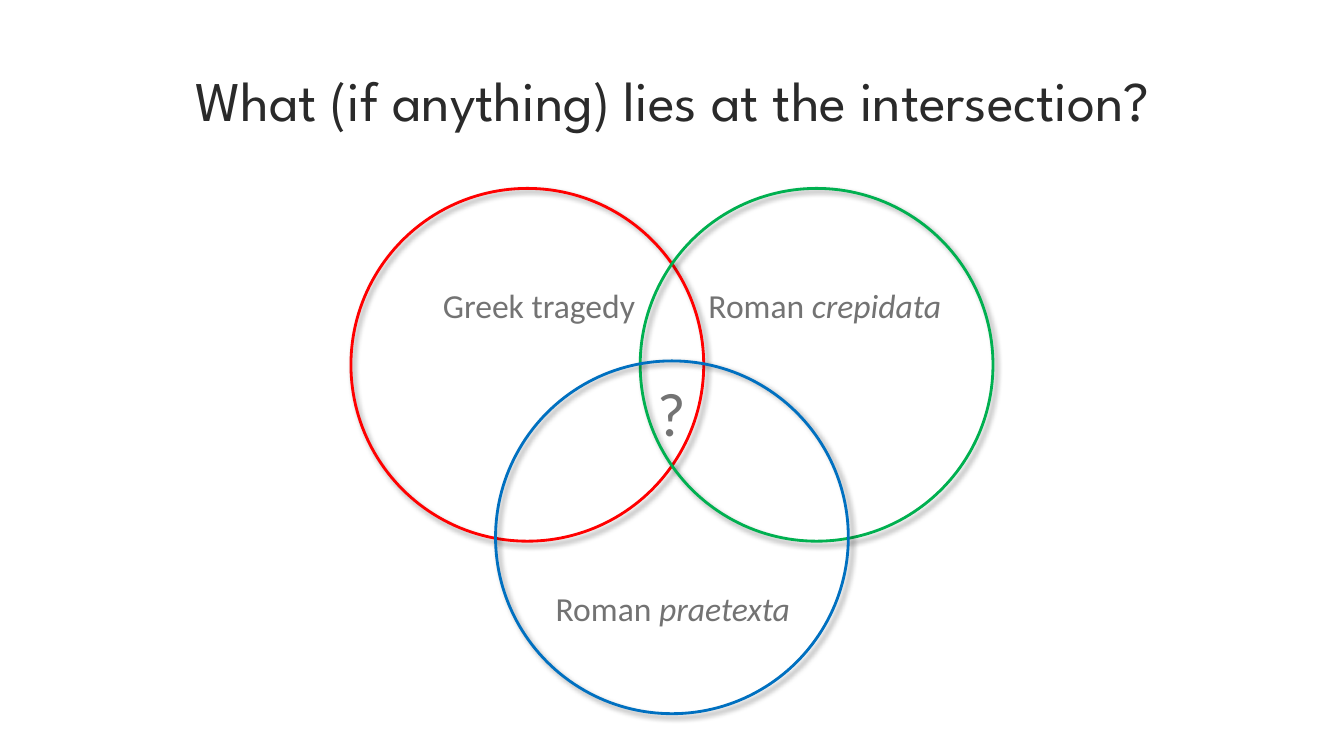
from lxml import etree
from pptx import Presentation
from pptx.dml.color import RGBColor
from pptx.enum.shapes import MSO_SHAPE
from pptx.enum.text import MSO_ANCHOR, MSO_AUTO_SIZE, PP_ALIGN
from pptx.oxml.ns import qn
from pptx.util import Pt

ELLIPSE = MSO_SHAPE.OVAL
TOP, MIDDLE = MSO_ANCHOR.TOP, MSO_ANCHOR.MIDDLE
GROW = MSO_AUTO_SIZE.SHAPE_TO_FIT_TEXT
LEFT, CENTER, RIGHT = PP_ALIGN.LEFT, PP_ALIGN.CENTER, PP_ALIGN.RIGHT


def rgb(hex_color):
    return RGBColor.from_string(hex_color)


class VennSlide:
    heading_font = "League Spartan"
    label_font = "Calibri"
    heading_color = "2A2A2A"
    label_color = "737373"
    diameter = 252

    def __init__(self, deck):
        self.slide = deck.slides.add_slide(deck.slide_layouts[5])

    def set_text(self, shape, runs, size, font, color, align, anchor, spacing):
        frame = shape.text_frame
        frame.word_wrap = False
        frame.auto_size = GROW
        frame.vertical_anchor = anchor
        paragraph = frame.paragraphs[0]
        paragraph.alignment = align
        paragraph.line_spacing = spacing
        for words, italic in runs:
            run = paragraph.add_run()
            run.text = words
            run.font.name = font
            run.font.size = Pt(size)
            run.font.italic = italic
            run.font.color.rgb = rgb(color)

    def title(self, words, left, top, width, height):
        heading = self.slide.shapes.title
        heading.left, heading.top = Pt(left), Pt(top)
        heading.width, heading.height = Pt(width), Pt(height)
        self.set_text(heading, [(words, False)], 40, self.heading_font,
                      self.heading_color, CENTER, MIDDLE, 0.9)

    def label(self, runs, left, top, width, height, align, size=24, anchor=TOP):
        box = self.slide.shapes.add_textbox(Pt(left), Pt(top), Pt(width), Pt(height))
        self.set_text(box, runs, size, self.label_font, self.label_color,
                      align, anchor, 1.25)

    def circle(self, center_x, center_y, color):
        radius = self.diameter / 2
        ring = self.slide.shapes.add_shape(
            ELLIPSE, Pt(center_x - radius), Pt(center_y - radius),
            Pt(self.diameter), Pt(self.diameter))
        ring.fill.background()
        ring.line.color.rgb = rgb(color)
        ring.line.width = Pt(2)
        self.cast_shadow(ring)

    def cast_shadow(self, shape):
        shape.shadow.inherit = False
        effects = shape.element.spPr.find(qn("a:effectLst"))
        shadow = etree.SubElement(
            effects, qn("a:outerShdw"), blurRad=str(Pt(4)), dist=str(Pt(3)),
            dir=str(45 * 60000), algn="tl", rotWithShape="0")
        tint = etree.SubElement(shadow, qn("a:srgbClr"), val="000000")
        etree.SubElement(tint, qn("a:alpha"), val="40000")


def main():
    deck = Presentation()
    deck.slide_width, deck.slide_height = Pt(960), Pt(540)
    venn = VennSlide(deck)

    venn.title("What (if anything) lies at the intersection?", 63.4, 48.2, 833.8, 51.1)
    venn.label([("?", False)], 462.2, 253.4, 35.3, 69.1, CENTER, 44, MIDDLE)

    middle_x, upper_y, lower_y, spread = 480, 260.6, 383.8, 103.3
    venn.circle(middle_x - spread, upper_y, "FF0000")
    venn.circle(middle_x + spread, upper_y, "00B050")
    venn.circle(middle_x, lower_y, "0070C0")

    label_height, upper_label_top = 41, 193
    venn.label([("Greek tragedy", False)],
               307.4, upper_label_top, 153.4, label_height, RIGHT)
    venn.label([("Roman ", False), ("crepidata", True)],
               499, upper_label_top, 182.2, label_height, LEFT)
    venn.label([("Roman ", False), ("praetexta", True)],
               388.8, 409, 183.6, label_height, CENTER)

    deck.save("out.pptx")


if __name__ == "__main__":
    main()
